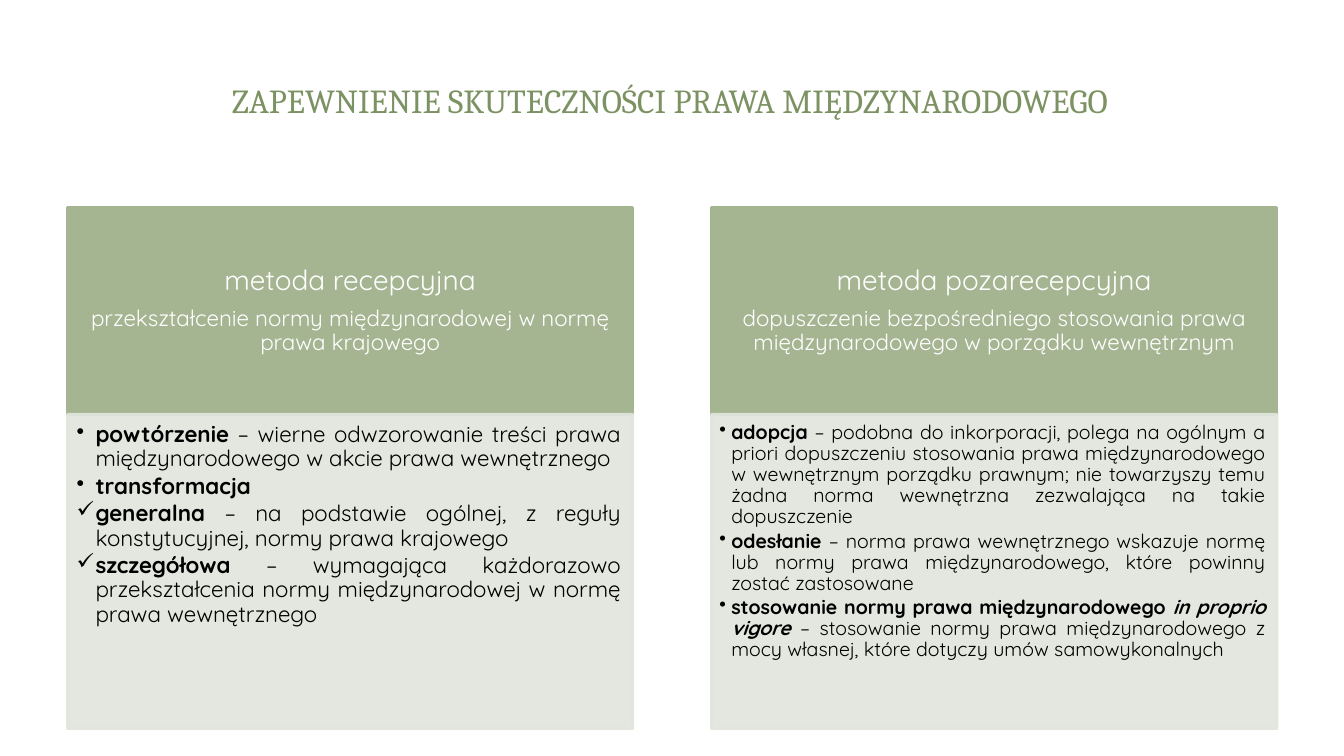
"""Build a slide comparing two methods of giving effect to international law."""
from lxml.etree import SubElement
from pptx import Presentation
from pptx.dml.color import RGBColor
from pptx.enum.shapes import MSO_SHAPE
from pptx.enum.text import MSO_ANCHOR, PP_ALIGN
from pptx.oxml.ns import qn
from pptx.util import Cm, Pt

WHITE = RGBColor(0xFF, 0xFF, 0xFF)
BLACK = RGBColor(0x00, 0x00, 0x00)
TITLE_GREEN = RGBColor(0x7D, 0x92, 0x63)
HEADER_GREEN = RGBColor(0xA5, 0xB5, 0x92)
BODY_GREEN = RGBColor(0xE1, 0xE5, 0xDC)

LEFT, COLUMN_STEP, WIDTH = 1.7, 16.23, 14.25
HEADER_TOP, HEADER_HEIGHT = 5.23, 5.21
BODY_TOP, BODY_HEIGHT = HEADER_TOP + HEADER_HEIGHT, 7.92

COLUMNS = [
    {
        "heading": "metoda recepcyjna",
        "summary": "przekształcenie normy międzynarodowej w normę prawa krajowego",
        "size": 16, "indent": 0.48, "margins": (0.23, 0.23, 0.3, 0.36),
        "points": [
            ("•", "powtórzenie", "", " – wierne odwzorowanie treści prawa "
             "międzynarodowego w akcie prawa wewnętrznego"),
            ("•", "transformacja", "", ""),
            ("✓", "generalna", "", " – na podstawie ogólnej, z reguły "
             "konstytucyjnej, normy prawa krajowego"),
            ("✓", "szczegółowa", "", " – wymagająca każdorazowo przekształcenia "
             "normy międzynarodowej w normę prawa wewnętrznego"),
        ],
    },
    {
        "heading": "metoda pozarecepcyjna",
        "summary": "dopuszczenie bezpośredniego stosowania prawa "
                   "międzynarodowego w porządku wewnętrznym",
        "size": 14, "indent": 0.3, "margins": (0.2, 0.2, 0.28, 0.3),
        "points": [
            ("•", "adopcja", "", " – podobna do inkorporacji, polega na ogólnym a priori "
             "dopuszczeniu stosowania prawa międzynarodowego w wewnętrznym porządku "
             "prawnym; nie towarzyszy temu żadna norma wewnętrzna zezwalająca na takie "
             "dopuszczenie"),
            ("•", "odesłanie", "", " – norma prawa wewnętrznego wskazuje normę lub normy "
             "prawa międzynarodowego, które powinny zostać zastosowane"),
            ("•", "stosowanie normy prawa międzynarodowego ", "in proprio vigore",
             " – stosowanie normy prawa międzynarodowego z mocy własnej, które dotyczy "
             "umów samowykonalnych"),
        ],
    },
]


def add_panel(left, top, height, color, margins, anchor):
    shape = slide.shapes.add_shape(
        MSO_SHAPE.RECTANGLE, Cm(left), Cm(top), Cm(WIDTH), Cm(height))
    shape.shadow.inherit = False
    shape.fill.solid()
    shape.fill.fore_color.rgb = color
    shape.line.color.rgb = color
    shape.line.width = Pt(2)
    frame = shape.text_frame
    frame.word_wrap = True
    frame.vertical_anchor = anchor
    (frame.margin_left, frame.margin_top,
     frame.margin_right, frame.margin_bottom) = map(Cm, margins)
    return shape


def format_paragraph(paragraph, alignment, size, color, gap, font="Quicksand"):
    paragraph.alignment = alignment
    paragraph.line_spacing = 0.9
    paragraph.space_after = Pt(size * gap)
    paragraph.font.name = font
    paragraph.font.size = Pt(size)
    paragraph.font.color.rgb = color


presentation = Presentation()
presentation.slide_width, presentation.slide_height = Cm(33.87), Cm(19.05)
slide = presentation.slides.add_slide(presentation.slide_layouts[6])

title = slide.shapes.add_textbox(Cm(1.57), Cm(1.14), Cm(30.61), Cm(2.9))
title.text_frame.word_wrap = True
title.text_frame.vertical_anchor = MSO_ANCHOR.MIDDLE
title.text_frame.text = "ZAPEWNIENIE SKUTECZNOŚCI PRAWA MIĘDZYNARODOWEGO"
format_paragraph(title.text_frame.paragraphs[0], PP_ALIGN.CENTER, 24, TITLE_GREEN, 0, "Cambria")

for index, column in enumerate(COLUMNS):
    left = LEFT + index * COLUMN_STEP
    header = add_panel(left, HEADER_TOP, HEADER_HEIGHT, HEADER_GREEN,
                       (0.41, 0.23, 0.41, 0.23), MSO_ANCHOR.MIDDLE)
    header.text_frame.text = column["heading"] + "\n" + column["summary"]
    for paragraph, size in zip(header.text_frame.paragraphs, (20, 16)):
        format_paragraph(paragraph, PP_ALIGN.CENTER, size, WHITE, 0.35)

    body = add_panel(left, BODY_TOP, BODY_HEIGHT, BODY_GREEN,
                     column["margins"], MSO_ANCHOR.TOP)
    for color in body._element.spPr.iter(qn("a:srgbClr")):
        SubElement(color, qn("a:alpha"), val="90000")
    for number, (bullet, term, latin, description) in enumerate(column["points"]):
        frame = body.text_frame
        paragraph = frame.add_paragraph() if number else frame.paragraphs[0]
        properties = paragraph._p.get_or_add_pPr()
        properties.set("marL", str(Cm(column["indent"])))
        properties.set("indent", str(-Cm(column["indent"])))
        SubElement(properties, qn("a:buChar"), char=bullet)
        format_paragraph(paragraph, PP_ALIGN.JUSTIFY, column["size"], BLACK, 0.15)
        for text, bold, italic in ((term, True, False), (latin, True, True),
                                   (description, False, False)):
            if text:
                run = paragraph.add_run()
                run.text = text
                run.font.bold = bold
                run.font.italic = italic

presentation.save("out.pptx")
